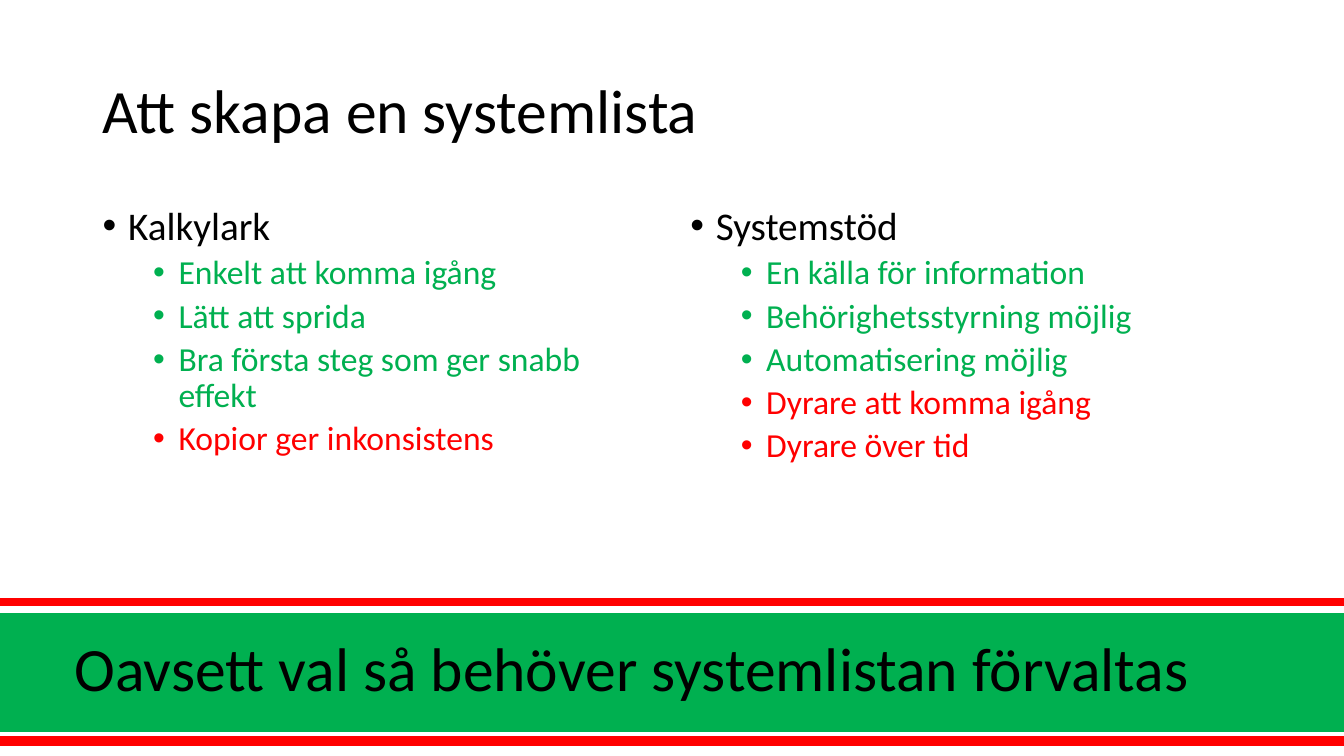
from dataclasses import dataclass

from lxml import etree
from pptx import Presentation
from pptx import util as u
from pptx.dml import color as col
from pptx.enum import shapes as sh, text as tx
from pptx.oxml import ns

HUES = {"black": "000000", "white": "FFFFFF", "green": "00B050", "red": "FF0000"}
FONT = "Calibri"
WIDTH, HEIGHT = 33.87, 19.05


@dataclass
class Box:
    left: float
    top: float
    width: float
    height: float

    def place(self) -> tuple:
        return tuple(u.Cm(v) for v in (self.left, self.top, self.width, self.height))


@dataclass
class Band:
    top: float
    height: float
    hue: str


@dataclass
class List:
    left: float
    head: str
    pros: list[str]
    cons: list[str]


def rgb(hue: str) -> col.RGBColor:
    return col.RGBColor.from_string(HUES[hue])


def add_frame(slide, box: Box, anchor):
    frame = slide.shapes.add_textbox(*box.place()).text_frame
    frame.word_wrap = True
    frame.vertical_anchor = anchor
    return frame


def add_run(para, words: str, size: int, hue: str) -> None:
    para.line_spacing = 0.9
    run = para.add_run()
    run.text = words
    run.font.name = FONT
    run.font.size = u.Pt(size)
    run.font.color.rgb = rgb(hue)


def add_bullet(para, indent: float, gap: int) -> None:
    para.space_before = u.Pt(gap)
    props = para._p.get_or_add_pPr()
    props.set("marL", str(u.Cm(indent)))
    props.set("indent", str(-u.Cm(0.64)))
    etree.SubElement(props, ns.qn("a:buFont")).set("typeface", "Arial")
    etree.SubElement(props, ns.qn("a:buChar")).set("char", "•")


def add_title(slide, box: Box, words: str) -> None:
    frame = add_frame(slide, box, tx.MSO_ANCHOR.MIDDLE)
    add_run(frame.paragraphs[0], words, 44, "black")


def add_list(slide, item: List) -> None:
    frame = add_frame(slide, Box(item.left, 5.08, 14.4, 7.06), tx.MSO_ANCHOR.TOP)
    head = frame.paragraphs[0]
    add_run(head, item.head, 28, "black")
    add_bullet(head, 0.64, 10)
    for hue, points in (("green", item.pros), ("red", item.cons)):
        for point in points:
            para = frame.add_paragraph()
            para.level = 1
            add_run(para, point, 24, hue)
            add_bullet(para, 1.91, 5)


def add_band(slide, band: Band) -> None:
    box = Box(0, band.top, WIDTH, band.height)
    shape = slide.shapes.add_shape(sh.MSO_SHAPE.RECTANGLE, *box.place())
    shape.shadow.inherit = False
    shape.fill.solid()
    shape.fill.fore_color.rgb = rgb(band.hue)
    shape.line.color.rgb = rgb(band.hue)
    shape.line.width = u.Pt(1)


LISTS = [
    List(
        2.34,
        "Kalkylark",
        [
            "Enkelt att komma igång",
            "Lätt att sprida",
            "Bra första steg som ger snabb effekt",
        ],
        ["Kopior ger inkonsistens"],
    ),
    List(
        17.15,
        "Systemstöd",
        [
            "En källa för information",
            "Behörighetsstyrning möjlig",
            "Automatisering möjlig",
        ],
        ["Dyrare att komma igång", "Dyrare över tid"],
    ),
]
BANDS = [
    Band(15.09, 3.68, "red"),
    Band(15.29, 3.25, "white"),
    Band(15.47, 2.95, "green"),
]


def main() -> None:
    deck = Presentation()
    deck.slide_width, deck.slide_height = u.Cm(WIDTH), u.Cm(HEIGHT)
    slide = deck.slides.add_slide(deck.slide_layouts[6])
    add_title(slide, Box(2.34, 1.02, 29.21, 3.68), "Att skapa en systemlista")
    for item in LISTS:
        add_list(slide, item)
    for band in BANDS:
        add_band(slide, band)
    add_title(
        slide,
        Box(1.63, 15.09, 31.75, 3.68),
        "Oavsett val så behöver systemlistan förvaltas",
    )
    deck.save("out.pptx")


if __name__ == "__main__":
    main()
